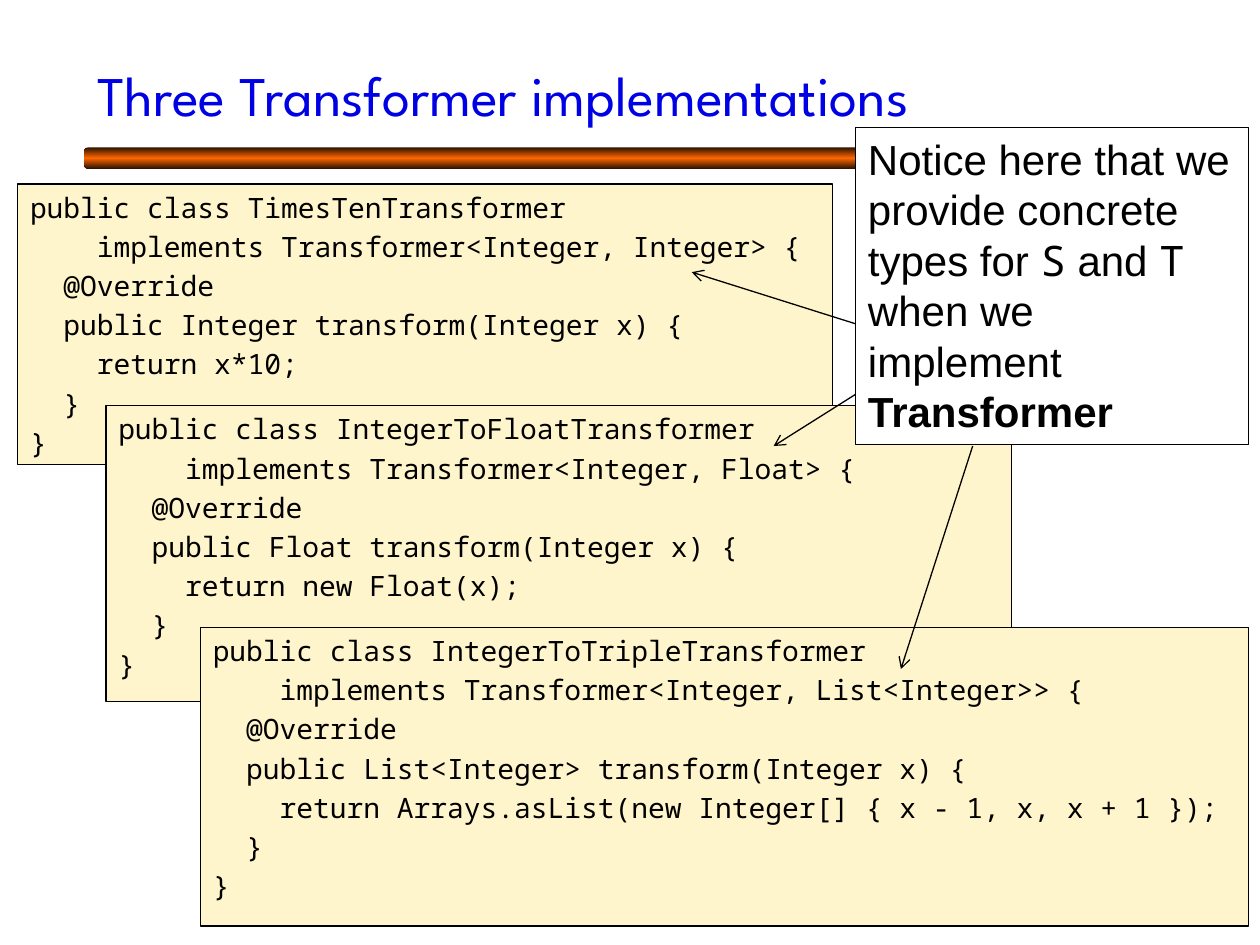
from copy import deepcopy

from lxml import etree
from pptx import Presentation
from pptx.dml.color import RGBColor
from pptx.enum.shapes import MSO_CONNECTOR, MSO_SHAPE
from pptx.enum.text import MSO_ANCHOR, PP_ALIGN
from pptx.oxml.ns import qn
from pptx.util import Inches, Pt

RECT = MSO_SHAPE.RECTANGLE
ROUND_RECT = MSO_SHAPE.ROUNDED_RECTANGLE
STRAIGHT = MSO_CONNECTOR.STRAIGHT
TOP, MIDDLE = MSO_ANCHOR.TOP, MSO_ANCHOR.MIDDLE
LEFT = PP_ALIGN.LEFT

COLORS = {
    "title": "0000E5",
    "ink": "000000",
    "code": "FFF5CC",
    "note": "FFFFFF",
    "band_edge": "2A1100",
    "band_core": "FF6600",
}
TITLE_FONT, CODE_FONT, NOTE_FONT = "League Spartan", "Noto Sans Mono", "Arial"

TRANSFORMERS = [
    ((0.14, 1.46, 6.47, 2.23), "TimesTenTransformer", "Integer", "x*10"),
    ((0.84, 3.22, 7.19, 2.35), "IntegerToFloatTransformer", "Float",
     "new Float(x)"),
    ((1.59, 4.98, 8.32, 2.37), "IntegerToTripleTransformer", "List<Integer>",
     "Arrays.asList(new Integer[] { x - 1, x, x + 1 })"),
]
NOTE_RUNS = [
    ("Notice here that we provide concrete types for ", NOTE_FONT, False),
    ("S", CODE_FONT, False),
    (" and ", NOTE_FONT, False),
    ("T", CODE_FONT, False),
    (" when we implement ", NOTE_FONT, False),
    ("Transformer", NOTE_FONT, True),
]
ARROWS = [
    (6.79, 2.57, 5.49, 2.16),
    (6.79, 3.13, 6.14, 3.54),
    (7.72, 3.54, 7.15, 5.31),
]


def rgb(name):
    """Return the named colour."""
    return RGBColor.from_string(COLORS[name])


def inches(box):
    """Convert a tuple of numbers to lengths."""
    return [Inches(v) for v in box]


def add_run(p, text, font, size, color="ink", bold=False):
    """Append one formatted run to a paragraph."""
    r = p.add_run()
    r.text = text
    r.font.name = font
    r.font.size = Pt(size)
    r.font.bold = bold
    r.font.color.rgb = rgb(color)


def add_title(s, box, text):
    """Place the title placeholder in its box."""
    sp = s.shapes.title
    sp.left, sp.top, sp.width, sp.height = inches(box)
    tf = sp.text_frame
    tf.word_wrap = True
    tf.vertical_anchor = MIDDLE
    p = tf.paragraphs[0]
    p.alignment = LEFT
    add_run(p, text, TITLE_FONT, 32, "title")


def add_band(s, box):
    """Draw the rounded gradient band under the title."""
    sp = s.shapes.add_shape(ROUND_RECT, *inches(box))
    sp.shadow.inherit = False
    sp.line.fill.background()
    sp.fill.gradient()
    sp.fill.gradient_angle = 90
    for stop in sp.fill.gradient_stops:
        stop.color.rgb = rgb("band_edge")
    first = sp._element.spPr.find(".//" + qn("a:gs"))
    core = deepcopy(first)
    core.set("pos", "50000")
    core.find(qn("a:srgbClr")).set("val", COLORS["band_core"])
    first.addnext(core)


def add_panel(s, box, fill):
    """Draw an outlined rectangle and return its text frame."""
    sp = s.shapes.add_shape(RECT, *inches(box))
    sp.shadow.inherit = False
    sp.fill.solid()
    sp.fill.fore_color.rgb = rgb(fill)
    sp.line.color.rgb = rgb("ink")
    sp.line.width = Pt(0.75)
    tf = sp.text_frame
    tf.word_wrap = True
    tf.vertical_anchor = TOP
    return tf


def add_code(s, box, name, result, expression):
    """Show one Transformer class as a code panel."""
    tf = add_panel(s, box, "code")
    lines = [
        f"public class {name}",
        f"    implements Transformer<Integer, {result}> {{",
        "  @Override",
        f"  public {result} transform(Integer x) {{",
        f"    return {expression};",
        "  }",
        "}",
    ]
    for i, line in enumerate(lines):
        p = tf.add_paragraph() if i else tf.paragraphs[0]
        p.alignment = LEFT
        p.space_before = Pt(3.2)
        add_run(p, line, CODE_FONT, 16)


def add_note(s, box):
    """Write the callout on concrete types."""
    p = add_panel(s, box, "note").paragraphs[0]
    p.alignment = LEFT
    for text, font, bold in NOTE_RUNS:
        add_run(p, text, font, 24, bold=bold)


def add_arrow(s, ends):
    """Draw an open-headed arrow from the callout to the code."""
    line = s.shapes.add_connector(STRAIGHT, *inches(ends))
    line.line.color.rgb = rgb("ink")
    line.line.width = Pt(0.75)
    etree.SubElement(line.line._get_or_add_ln(), qn("a:tailEnd"), type="arrow")
    etree.SubElement(line._element.spPr, qn("a:effectLst"))


def main():
    """Build the slide and save it."""
    prs = Presentation()
    prs.slide_width, prs.slide_height = Inches(10), Inches(7.5)
    s = prs.slides.add_slide(prs.slide_layouts[5])
    add_band(s, (0.67, 1.17, 8.92, 0.17))
    add_title(s, (0.67, 0.25, 8.92, 1), "Three Transformer implementations")
    for transformer in TRANSFORMERS:
        add_code(s, *transformer)
    add_note(s, (6.79, 1.01, 3.12, 2.52))
    for ends in ARROWS:
        add_arrow(s, ends)
    prs.save("out.pptx")


if __name__ == "__main__":
    main()
